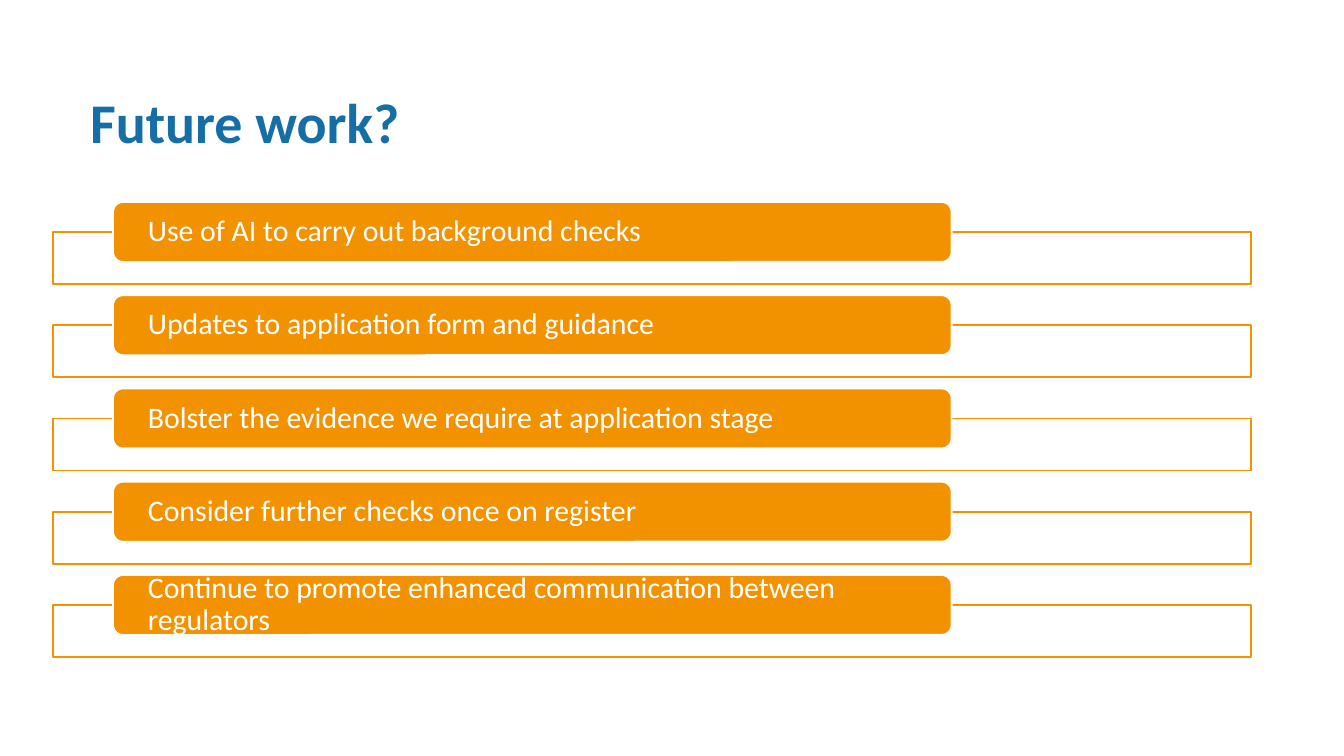
import pptx
import pptx.dml.color
import pptx.enum.shapes
import pptx.enum.text
import pptx.oxml.ns
import pptx.util
from lxml import etree

PX = 914400 / 134.4
BLUE = pptx.dml.color.RGBColor(0x15, 0x6E, 0xA5)
ORANGE = pptx.dml.color.RGBColor(0xF3, 0x92, 0x00)
WHITE = pptx.dml.color.RGBColor(0xFF, 0xFF, 0xFF)
FONT = "Calibri"
KIND = pptx.enum.shapes.MSO_SHAPE

ITEMS = [
    "Use of AI to carry out background checks",
    "Updates to application form and guidance",
    "Bolster the evidence we require at application stage",
    "Consider further checks once on register",
    "Continue to promote enhanced communication between regulators",
]


def px(n):
    return pptx.util.Emu(round(n * PX))


def write(frame, text, size, color, bold=False):
    frame.word_wrap = True
    para = frame.paragraphs[0]
    para.text = text
    para.alignment = pptx.enum.text.PP_ALIGN.LEFT
    para.line_spacing = 0.9
    font = para.font
    font.name = FONT
    font.size = pptx.util.Pt(size)
    font.bold = bold
    font.color.rgb = color


def add_box(slide, kind, box, fill, line):
    shape = slide.shapes.add_shape(kind, *map(px, box))
    shape.shadow.inherit = False
    shape.fill.solid()
    shape.fill.fore_color.rgb = fill
    shape.line.color.rgb = line
    shape.line.width = pptx.util.Pt(1)
    return shape


def fade(shape, share):
    """Set the opacity of a solid fill, in percent."""
    qn = pptx.oxml.ns.qn
    tint = shape.fill._xPr.find(qn("a:solidFill")).find(qn("a:srgbClr"))
    etree.SubElement(tint, qn("a:alpha"), val=str(share * 1000))


def add_title(slide, box, text):
    title = slide.shapes.add_textbox(*map(px, box))
    write(title.text_frame, text, 30, BLUE, bold=True)


def add_row(slide, box, text):
    """Draw an outlined frame with a labelled bar over its top edge."""
    left, top, width, height = box
    frame = add_box(slide, KIND.RECTANGLE, (left, top + 30, width, height - 30),
                    WHITE, ORANGE)
    fade(frame, 90)
    bar = add_box(slide, KIND.ROUNDED_RECTANGLE,
                  (left + 60, top, width * 0.7, 60), ORANGE, WHITE)
    body = bar.text_frame
    body.margin_left = body.margin_right = px(32)
    body.margin_top = body.margin_bottom = 0
    body.vertical_anchor = pptx.enum.text.MSO_ANCHOR.MIDDLE
    write(body, text, 16, WHITE)


def add_list(slide, box, items):
    left, top, width, height = box
    tall = 82
    step = (height - tall) / (len(items) - 1)
    for i, item in enumerate(items):
        add_row(slide, (left, top + i * step, width, tall), item)


def main():
    deck = pptx.Presentation()
    deck.slide_width, deck.slide_height = px(1344), px(756)
    slide = deck.slides.add_slide(deck.slide_layouts[6])
    add_title(slide, (77, 89, 1008, 70), "Future work?")
    add_list(slide, (53, 202, 1198, 455), ITEMS)
    deck.save("out.pptx")


if __name__ == "__main__":
    main()
